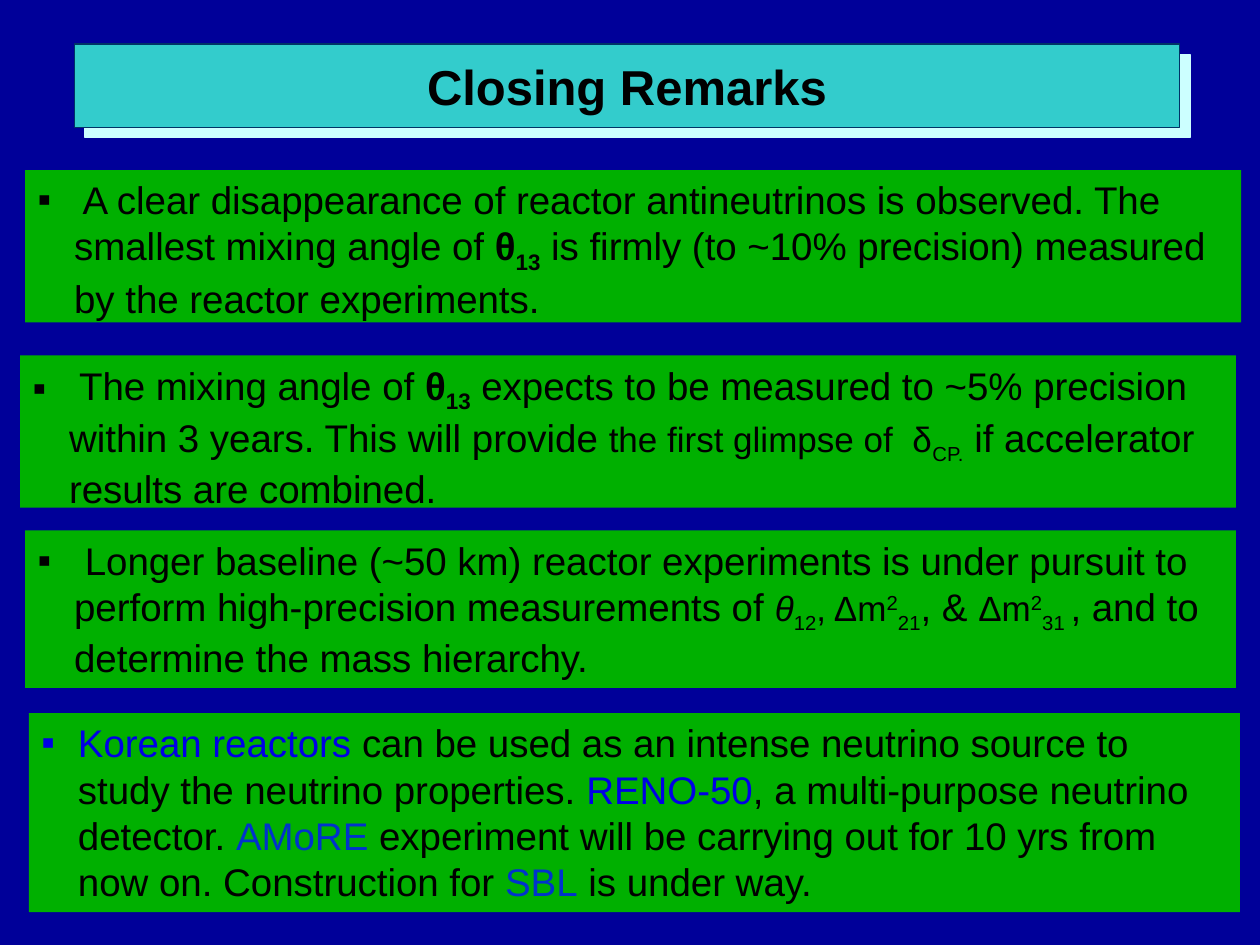
from lxml import etree
from pptx import Presentation
from pptx.dml.color import RGBColor
from pptx.enum.shapes import MSO_SHAPE
from pptx.enum.text import MSO_ANCHOR, MSO_AUTO_SIZE, PP_ALIGN
from pptx.oxml.ns import qn
from pptx.util import Inches, Pt

RECTANGLE = MSO_SHAPE.RECTANGLE
TOP, MIDDLE = MSO_ANCHOR.TOP, MSO_ANCHOR.MIDDLE
LEFT, CENTER = PP_ALIGN.LEFT, PP_ALIGN.CENTER
FIXED_SIZE = MSO_AUTO_SIZE.NONE
TITLE_ONLY = 5
COLUMNS, ROWS = 100, 75

# Run formats, combined with |
PLAIN = {}
BOLD = {"bold": True}
ITALIC = {"italic": True}
SMALL = {"size": 20}
SUB = {"baseline": -25}
SUPER = {"baseline": 30}
BLUE = {"color": "0000E5"}
ROYAL = {"color": "0033CC"}

THETA_13 = [(" θ", BOLD), ("13", BOLD | SUB)]

DISAPPEARANCE = [
    (" A clear disappearance of reactor antineutrinos is observed. "
     "The smallest mixing angle of", PLAIN),
    *THETA_13,
    (" is firmly (to ~10% precision) measured by the reactor experiments.", PLAIN),
]
PRECISION = [
    (" The mixing angle of", PLAIN),
    *THETA_13,
    (" expects to be measured to ~5% precision within 3 years. "
     "This will provide ", PLAIN),
    ("the first glimpse of  δ", SMALL),
    ("CP.", SMALL | SUB),
    (" if accelerator results are combined.", PLAIN),
]
LONG_BASELINE = [
    (" Longer baseline (~50 km) reactor experiments is under pursuit to "
     "perform high-precision measurements of ", PLAIN),
    ("θ", SMALL | ITALIC),
    ("12", SMALL | SUB),
    (", Δm", SMALL),
    ("2", SMALL | SUPER),
    ("21", SMALL | SUB),
    (", & ", PLAIN),
    ("Δm", SMALL),
    ("2", SMALL | SUPER),
    ("31 ", SMALL | SUB),
    (", and to determine the mass hierarchy.", PLAIN),
]
KOREAN_REACTORS = [
    ("Korean reactors ", BLUE),
    ("can be used as an intense neutrino source to study the neutrino "
     "properties. ", PLAIN),
    ("RENO-50", BLUE),
    (", a multi-purpose neutrino detector. ", PLAIN),
    ("AMoRE", ROYAL),
    (" experiment will be carrying out for 10 yrs from now on. "
     "Construction for ", PLAIN),
    ("SBL", ROYAL),
    (" is under way.", PLAIN),
]

# Column, row, columns wide, rows high, runs
REMARKS = [
    (2, 13.5, 96.5, 12.1, DISAPPEARANCE),
    (1.6, 28.2, 96.5, 12.1, PRECISION),
    (2, 42.1, 96.1, 12.5, LONG_BASELINE),
    (2.3, 56.6, 96.1, 15.8, KOREAN_REACTORS),
]


def rgb(code):
    return RGBColor.from_string(code)


class RemarksSlide:
    font = "Arial"
    ink = "000000"
    background = "000099"
    panel = "00B000"
    banner, banner_edge, banner_shadow = "33CCCC", "003366", "CCFFFF"
    title_size, text_size = 28, 22
    indent = Inches(0.29)

    def __init__(self, deck):
        self.deck = deck
        self.slide = deck.slides.add_slide(deck.slide_layouts[TITLE_ONLY])
        fill = self.slide.background.fill
        fill.solid()
        fill.fore_color.rgb = rgb(self.background)

    def place(self, columns, rows):
        return (round(self.deck.slide_width * columns / COLUMNS),
                round(self.deck.slide_height * rows / ROWS))

    def add_run(self, paragraph, text, size, color=ink, bold=False,
                italic=False, baseline=0):
        run = paragraph.add_run()
        run.text = text
        font = run.font
        font.name, font.size = self.font, Pt(size)
        font.bold, font.italic = bold, italic
        font.color.rgb = rgb(color)
        if baseline:
            run._r.get_or_add_rPr().set("baseline", str(baseline * 1000))

    def add_hard_shadow(self, shape):
        effects = etree.SubElement(shape._element.spPr, qn("a:effectLst"))
        shadow = etree.SubElement(
            effects, qn("a:outerShdw"), dist=str(Pt(8.5)),
            dir=str(45 * 60000), algn="tl", rotWithShape="0")
        etree.SubElement(shadow, qn("a:srgbClr"), val=self.banner_shadow)

    def title(self, text, column, row, wide, high):
        title = self.slide.shapes.title
        title.left, title.top = self.place(column, row)
        title.width, title.height = self.place(wide, high)
        title.fill.solid()
        title.fill.fore_color.rgb = rgb(self.banner)
        title.line.color.rgb = rgb(self.banner_edge)
        title.line.width = Pt(0.75)
        self.add_hard_shadow(title)
        frame = title.text_frame
        frame.word_wrap, frame.auto_size = False, FIXED_SIZE
        frame.vertical_anchor = MIDDLE
        heading = frame.paragraphs[0]
        heading.alignment = CENTER
        self.add_run(heading, text, self.title_size, bold=True)

    def remark(self, column, row, wide, high, runs):
        panel = self.slide.shapes.add_shape(
            RECTANGLE, *self.place(column, row), *self.place(wide, high))
        panel.shadow.inherit = False
        panel.fill.solid()
        panel.fill.fore_color.rgb = rgb(self.panel)
        panel.line.fill.background()
        frame = panel.text_frame
        frame.word_wrap, frame.auto_size = True, FIXED_SIZE
        frame.vertical_anchor = TOP
        remark = frame.paragraphs[0]
        remark.alignment = LEFT
        properties = remark._p.get_or_add_pPr()
        properties.set("marL", str(self.indent))
        properties.set("indent", str(-self.indent))
        etree.SubElement(properties, qn("a:buFont"), typeface=self.font)
        etree.SubElement(properties, qn("a:buChar"), char="▪")
        for text, style in runs:
            self.add_run(remark, text, **{"size": self.text_size, **style})


def main():
    deck = Presentation()
    deck.slide_width, deck.slide_height = Inches(10), Inches(7.5)
    closing = RemarksSlide(deck)
    closing.title("Closing Remarks", 5.9, 3.5, 87.7, 6.6)
    for remark in REMARKS:
        closing.remark(*remark)
    deck.save("out.pptx")


if __name__ == "__main__":
    main()
